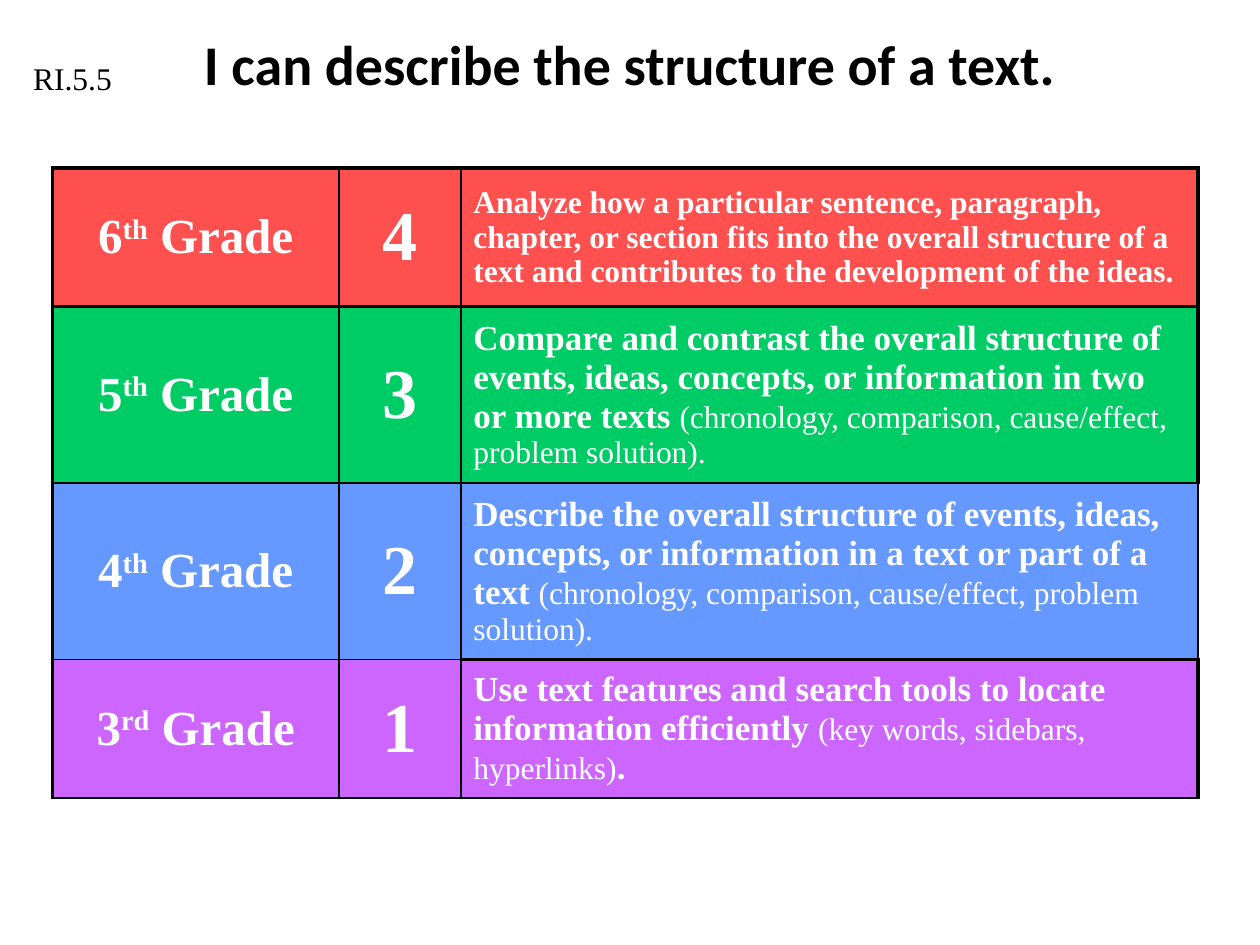
from lxml import etree
from pptx import Presentation
from pptx.dml.color import RGBColor
from pptx.enum.text import MSO_ANCHOR, PP_ALIGN
from pptx.oxml.ns import qn
from pptx.util import Cm, Pt

CENTER, LEFT = PP_ALIGN.CENTER, PP_ALIGN.LEFT
MIDDLE, TOP = MSO_ANCHOR.MIDDLE, MSO_ANCHOR.TOP

COLORS = {"black": "000000", "white": "FFFFFF", "6": "FF5050",
          "5": "00CC66", "4": "6699FF", "3": "CC66FF"}
SERIF = "Times New Roman"
TITLE = "I can describe the structure of a text."
STANDARD = "RI.5.5"

BOLD, PLAIN = {"size": 20}, {"size": 18, "bold": False}
STRUCTURES = ("(chronology, comparison, cause/effect, problem solution).", PLAIN)
LEVELS = [
    ("6", "th", "4", [
        ("Analyze how a particular sentence, paragraph, chapter, or section fits into "
         "the overall structure of a text and contributes to the development of the ideas.",
         {"size": 18})]),
    ("5", "th", "3", [
        ("Compare and contrast the overall structure of events, ideas, concepts, "
         "or information in two or more texts ", BOLD), STRUCTURES]),
    ("4", "th", "2", [
        ("Describe the overall structure of events, ideas, concepts, "
         "or information in a text or part of a text ", BOLD), STRUCTURES]),
    ("3", "rd", "1", [
        ("Use text features and search tools to locate information efficiently ", BOLD),
        ("(key words, sidebars, hyperlinks)", PLAIN), (".", BOLD)]),
]
COLUMN_WIDTHS = [5.77, 2.46, 14.86]
ROW_HEIGHTS = [2.79, 3.3, 3.3, 2.79]
BORDER_SIDES = ("L", "R", "T", "B")
BORDERS = [
    [(2.25, 1, 2.25, 1.5), (1, 1, 2.25, 1.5), (1, 2.25, 2.25, 1.5)],
    [(2.25, 1, 1.5, 1), (1, 1, 1.5, 1), (1, 2.25, 1.5, 1.5)],
    [(2.25, 1.5, 1, 1), (1.5, 1.5, 1, 1), (1.5, 1.5, 1.5, 1.5)],
    [(2.25, 1, 1, 1.5), (1, 1, 1, 1.5), (1, 2.25, 1.5, 1.5)],
]


def add_text(paragraph, text, size=18, font=SERIF, color="black", bold=False,
             align=LEFT, baseline=None):
    paragraph.alignment = align
    run = paragraph.add_run()
    run.text = text
    run.font.size, run.font.name, run.font.bold = Pt(size), font, bold
    run.font.color.rgb = RGBColor.from_string(COLORS[color])
    if baseline:
        run.font._element.set("baseline", str(baseline * 1000))


def add_box(slide, text, left, top, width, height, anchor=TOP, **text_format):
    box = slide.shapes.add_textbox(Cm(left), Cm(top), Cm(width), Cm(height))
    box.text_frame.word_wrap = True
    box.text_frame.vertical_anchor = anchor
    add_text(box.text_frame.paragraphs[0], text, **text_format)


def set_borders(cell, widths):
    properties = cell._tc.get_or_add_tcPr()
    for index, (side, width) in enumerate(zip(BORDER_SIDES, widths)):
        line = etree.Element(qn(f"a:ln{side}"), w=str(Pt(width)))
        fill = etree.SubElement(line, qn("a:solidFill"))
        etree.SubElement(fill, qn("a:srgbClr"), val=COLORS["black"])
        properties.insert(index, line)


def add_levels(slide):
    table = slide.shapes.add_table(
        len(LEVELS), len(COLUMN_WIDTHS), Cm(1.06), Cm(3.39),
        Cm(sum(COLUMN_WIDTHS)), Cm(sum(ROW_HEIGHTS))).table
    table.first_row = table.horz_banding = False
    for column, width in zip(table.columns, COLUMN_WIDTHS):
        column.width = Cm(width)
    for row, height in zip(table.rows, ROW_HEIGHTS):
        row.height = Cm(height)
    for row, (grade, suffix, score, description) in enumerate(LEVELS):
        label = [(grade, {"size": 28}), (suffix, {"size": 28, "baseline": 30}),
                 (" Grade", {"size": 28})]
        contents = [(label, CENTER), ([(score, {"size": 40})], CENTER), (description, LEFT)]
        for column, (runs, align) in enumerate(contents):
            cell = table.cell(row, column)
            cell.vertical_anchor = MIDDLE
            cell.fill.solid()
            cell.fill.fore_color.rgb = RGBColor.from_string(COLORS[grade])
            set_borders(cell, BORDERS[row][column])
            for text, text_format in runs:
                add_text(cell.text_frame.paragraphs[0], text, align=align,
                         **{"color": "white", "bold": True, **text_format})


def main():
    presentation = Presentation()
    presentation.slide_width, presentation.slide_height = Cm(25.4), Cm(19.05)
    slide = presentation.slides.add_slide(presentation.slide_layouts[6])
    add_box(slide, TITLE, 0.85, 0, 23.7, 2.54, anchor=MIDDLE,
            size=32, font="Calibri", bold=True, align=CENTER)
    add_levels(slide)
    add_box(slide, STANDARD, 0.42, 1.06, 3.6, 1.03)
    presentation.save("out.pptx")


if __name__ == "__main__":
    main()
